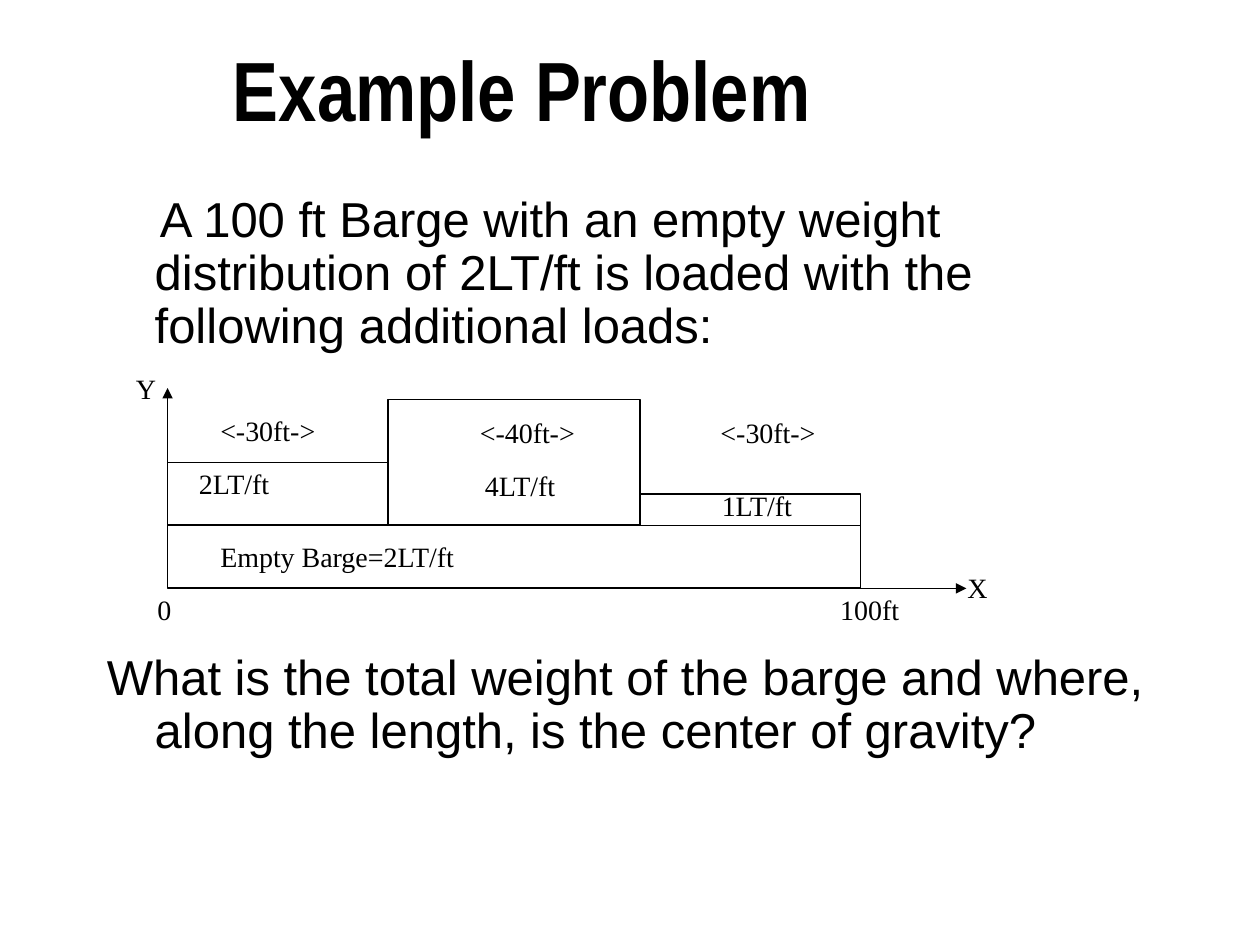
from pptx import Presentation
from pptx.dml.color import RGBColor
from pptx.enum.shapes import MSO_CONNECTOR, MSO_SHAPE
from pptx.enum.text import MSO_ANCHOR
from pptx.oxml.ns import qn
from pptx.util import Inches, Pt
from lxml import etree

BLACK = RGBColor(0, 0, 0)
RECTANGLE = MSO_SHAPE.RECTANGLE
STRAIGHT = MSO_CONNECTOR.STRAIGHT
MIDDLE = MSO_ANCHOR.MIDDLE

# Diagram geometry in inches
ORIGIN_X, ORIGIN_Y = 1.33, 4.67
HEIGHT_PER_LOAD = 0.25
EMPTY_LOAD = 2
SECTIONS = [(1.75, 2), (2, 4), (1.75, 1)]  # drawn width, load in LT/ft


class SlideBuilder:
    title_font = "Arial Narrow"
    body_font = "Arial"
    label_font = "Times New Roman"

    def __init__(self, slide):
        self.slide = slide

    def text(self, left, top, width, height, paragraphs, font, size,
             bold=False, wrap=True, line_spacing=None):
        box = self.slide.shapes.add_textbox(
            Inches(left), Inches(top), Inches(width), Inches(height))
        text_frame = box.text_frame
        text_frame.text = "\n".join(paragraphs)
        text_frame.word_wrap = wrap
        for paragraph in text_frame.paragraphs:
            if line_spacing:
                paragraph.line_spacing = line_spacing
            for run in paragraph.runs:
                run.font.name = font
                run.font.size = Pt(size)
                run.font.bold = bold
                run.font.color.rgb = BLACK
        return text_frame

    def title(self, text):
        text_frame = self.text(1.75, 0.17, 6.67, 1.25, [text],
                               self.title_font, 48, bold=True, line_spacing=0.7)
        text_frame.vertical_anchor = MIDDLE

    def body(self, paragraphs):
        """Each paragraph is (text, first line indent, space before)."""
        text_frame = self.text(0.75, 1.5, 8.5, 5, [text for text, _, _ in paragraphs],
                               self.body_font, 28, line_spacing=0.9)
        for paragraph, (_, indent, space) in zip(text_frame.paragraphs, paragraphs):
            paragraph.space_before = Pt(space)
            properties = paragraph._p.get_or_add_pPr()
            properties.set("marL", str(Inches(0.38)))
            properties.set("indent", str(Inches(indent)))

    def label(self, left, top, width, text):
        self.text(left, top, width, 0.36, [text], self.label_font, 16, wrap=False)

    def block(self, left, bottom, width, height):
        shape = self.slide.shapes.add_shape(
            RECTANGLE, Inches(left), Inches(bottom - height),
            Inches(width), Inches(height))
        shape.shadow.inherit = False
        shape.fill.background()
        shape.line.color.rgb = BLACK
        shape.line.width = Pt(1)

    def axis(self, end_x, end_y):
        connector = self.slide.shapes.add_connector(
            STRAIGHT, Inches(ORIGIN_X), Inches(ORIGIN_Y), Inches(end_x), Inches(end_y))
        connector.line.color.rgb = BLACK
        connector.line.width = Pt(1)
        line = connector.line._get_or_add_ln()
        etree.SubElement(line, qn("a:tailEnd"), type="triangle")
        etree.SubElement(connector._element.spPr, qn("a:effectLst"))


def main():
    presentation = Presentation()
    presentation.slide_width = Inches(10)
    presentation.slide_height = Inches(7.5)
    builder = SlideBuilder(presentation.slides.add_slide(presentation.slide_layouts[6]))

    # Title and problem statement, with room for the diagram between paragraphs
    builder.title("Example Problem")
    builder.body([
        ("A 100 ft Barge with an empty weight distribution of 2LT/ft is loaded "
         "with the following additional loads:", 0.04, 5.6),
        ("What is the total weight of the barge and where, along the length, "
         "is the center of gravity?", -0.38, 171),
    ])

    # Axes
    builder.axis(ORIGIN_X, 3.08)
    builder.axis(7.67, ORIGIN_Y)

    # Empty barge with the loads side by side on top
    barge_height = EMPTY_LOAD * HEIGHT_PER_LOAD
    barge_length = sum(width for width, _ in SECTIONS)
    builder.block(ORIGIN_X, ORIGIN_Y, barge_length, barge_height)
    left = ORIGIN_X
    for width, load in SECTIONS:
        builder.block(left, ORIGIN_Y - barge_height, width, load * HEIGHT_PER_LOAD)
        left += width

    # Labels: left, top, width, text
    for label in [
        (1.65, 4.23, 2.09, "Empty Barge=2LT/ft"),
        (1.15, 4.65, 0.31, "0"),
        (6.57, 4.65, 0.67, "100ft"),
        (7.58, 4.48, 0.36, "X"),
        (0.98, 2.9, 0.36, "Y"),
        (1.65, 3.23, 0.96, "<-30ft->"),
        (3.71, 3.25, 0.96, "<-40ft->"),
        (5.62, 3.25, 0.96, "<-30ft->"),
        (1.48, 3.65, 0.78, "2LT/ft"),
        (3.75, 3.67, 0.78, "4LT/ft"),
        (5.63, 3.83, 0.78, "1LT/ft"),
    ]:
        builder.label(*label)

    presentation.save("out.pptx")


if __name__ == "__main__":
    main()
